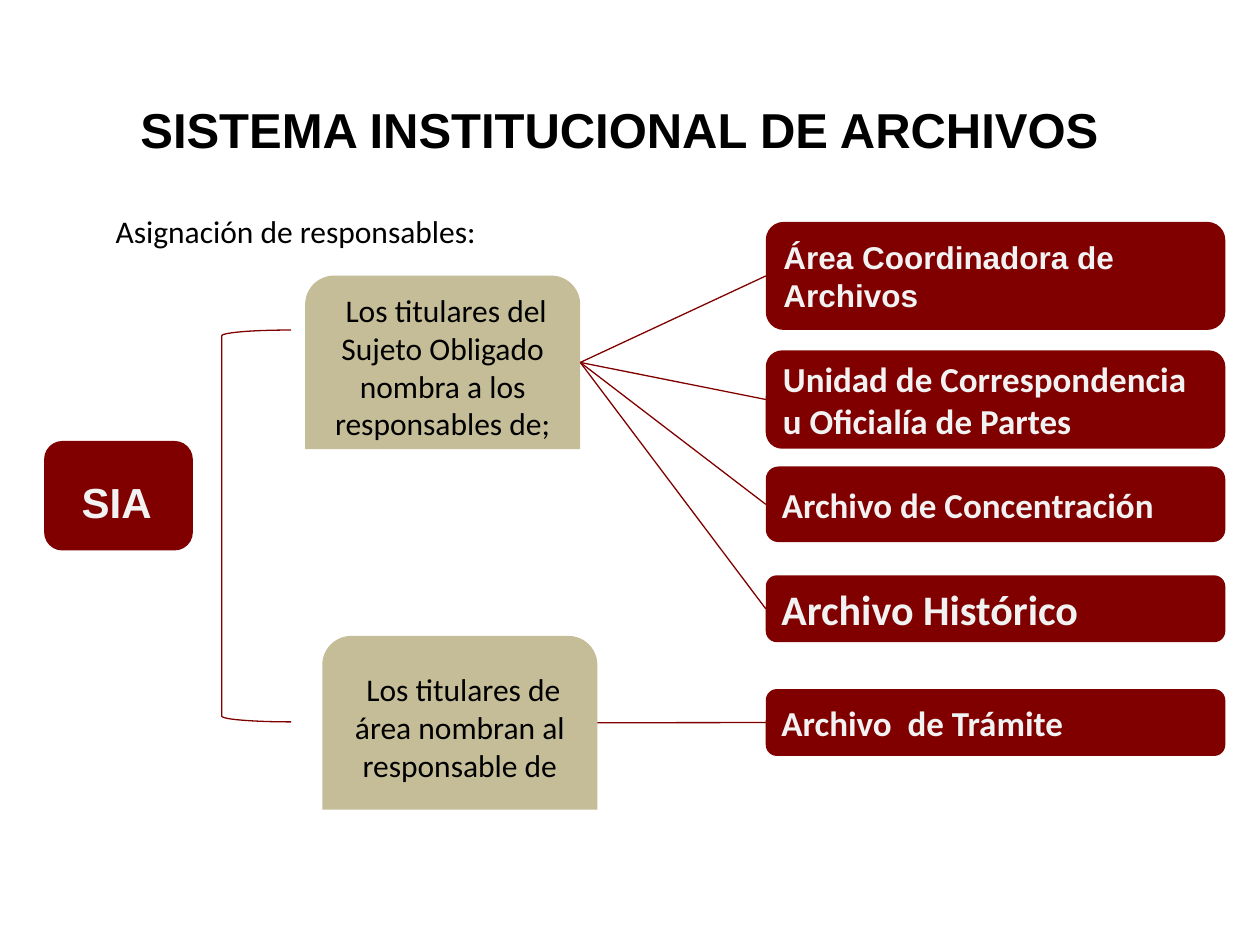
from lxml.etree import SubElement as Sub
from pptx import Presentation
from pptx.dml.color import RGBColor
from pptx.enum.shapes import MSO_CONNECTOR as Conn, MSO_SHAPE as Kind
from pptx.enum.text import MSO_ANCHOR as Anchor, MSO_AUTO_SIZE as Auto, PP_ALIGN as Align
from pptx.oxml.ns import qn
from pptx.util import Pt

RED, TAN, PALE, BLACK = "800000", "C4BD97", "F2F2F2", "000000"


def color(code):
    return RGBColor.from_string(code)


class Chart:
    def __init__(self, slide):
        self.slide = slide
        self.shapes = slide.shapes
        self.line = 0.75

    def fill_text(self, shape, text, size, face="Calibri", ink=BLACK, bold=False,
                  align=Align.LEFT, anchor=Anchor.TOP):
        frame = shape.text_frame
        for name, value in {"word_wrap": True, "auto_size": Auto.NONE,
                            "vertical_anchor": anchor}.items():
            setattr(frame, name, value)
        frame.text = text
        para = frame.paragraphs[0]
        para.alignment = align
        font = para.runs[0].font
        for name, value in {"name": face, "size": Pt(size), "bold": bold}.items():
            setattr(font, name, value)
        font.color.rgb = color(ink)

    def title(self, text, area, **style):
        shape = self.shapes.title
        for name, value in zip(("left", "top", "width", "height"), area):
            setattr(shape, name, Pt(value))
        self.fill_text(shape, text, **style)
        for side in ("left", "top", "right", "bottom"):
            setattr(shape.text_frame, f"margin_{side}", 0)

    def label(self, text, area, **style):
        self.fill_text(self.shapes.add_textbox(*map(Pt, area)), text, **style)

    def box(self, kind, area, fill, text="", **style):
        shape = self.shapes.add_shape(kind, *map(Pt, area))
        shape.shadow.inherit = False
        shape.fill.solid()
        shape.fill.fore_color.rgb = color(fill)
        shape.line.fill.background()
        if text:
            self.fill_text(shape, text, anchor=Anchor.MIDDLE, **style)
        return shape

    def brace(self, area):
        shape = self.shapes.add_shape(Kind.LEFT_BRACKET, *map(Pt, area))
        shape.shadow.inherit = False
        shape.fill.background()
        self.stroke(shape)

    def stroke(self, shape):
        shape.line.color.rgb = color(RED)
        shape.line.width = Pt(self.line)

    def link(self, start, end):
        x, y = start.left + start.width, start.top + start.height // 2
        wire = self.shapes.add_connector(Conn.STRAIGHT, x, y, end.left, y)
        wire.end_connect(end, 1)
        self.stroke(wire)
        Sub(wire.element.spPr, qn("a:effectLst"))


def main():
    deck = Presentation()
    deck.slide_width, deck.slide_height = Pt(720), Pt(540)
    chart = Chart(deck.slides.add_slide(deck.slide_layouts[5]))

    chart.title("SISTEMA INSTITUCIONAL DE ARCHIVOS", (56.2, 57, 595.4, 35.3),
                size=28, face="Arial", bold=True, align=Align.CENTER)
    chart.label("Asignación de responsables:", (59, 117.4, 613.4, 28.8),
                size=18, align=Align.JUSTIFY)
    chart.box(Kind.ROUNDED_RECTANGLE, (25.2, 252, 85, 62.6), RED)
    chart.label("SIA", (39.6, 268.6, 144.7, 36), size=24, face="Arial",
                ink=PALE, bold=True)
    chart.brace((126.7, 188.6, 39.6, 223.9))

    heads = [chart.box(Kind.ROUND_2_SAME_RECTANGLE, (x, y, 157.2, 99.2), TAN,
                       text, size=18, align=Align.CENTER)
             for x, y, text in (
                 (174.4, 157.5, " Los titulares del Sujeto Obligado nombra a los responsables de;"),
                 (184.2, 363.4, " Los titulares de área nombran al responsable de"))]

    rows = (
        (0, 126.8, 61.8, "Área Coordinadora de Archivos", 18, "Arial"),
        (0, 200.2, 56.2, "Unidad de Correspondencia u Oficialía de Partes", 20, "Calibri"),
        (0, 266.6, 43.2, "Archivo de Concentración", 20, "Calibri"),
        (0, 328.8, 38.2, "Archivo Histórico", 24, "Calibri"),
        (1, 393.8, 38.2, "Archivo  de Trámite", 20, "Calibri"),
    )
    for head, top, tall, text, size, face in rows:
        unit = chart.box(Kind.ROUNDED_RECTANGLE, (437.6, top, 262.6, tall), RED,
                         text, size=size, face=face, ink=PALE, bold=True)
        chart.link(heads[head], unit)

    deck.save("out.pptx")


if __name__ == "__main__":
    main()
